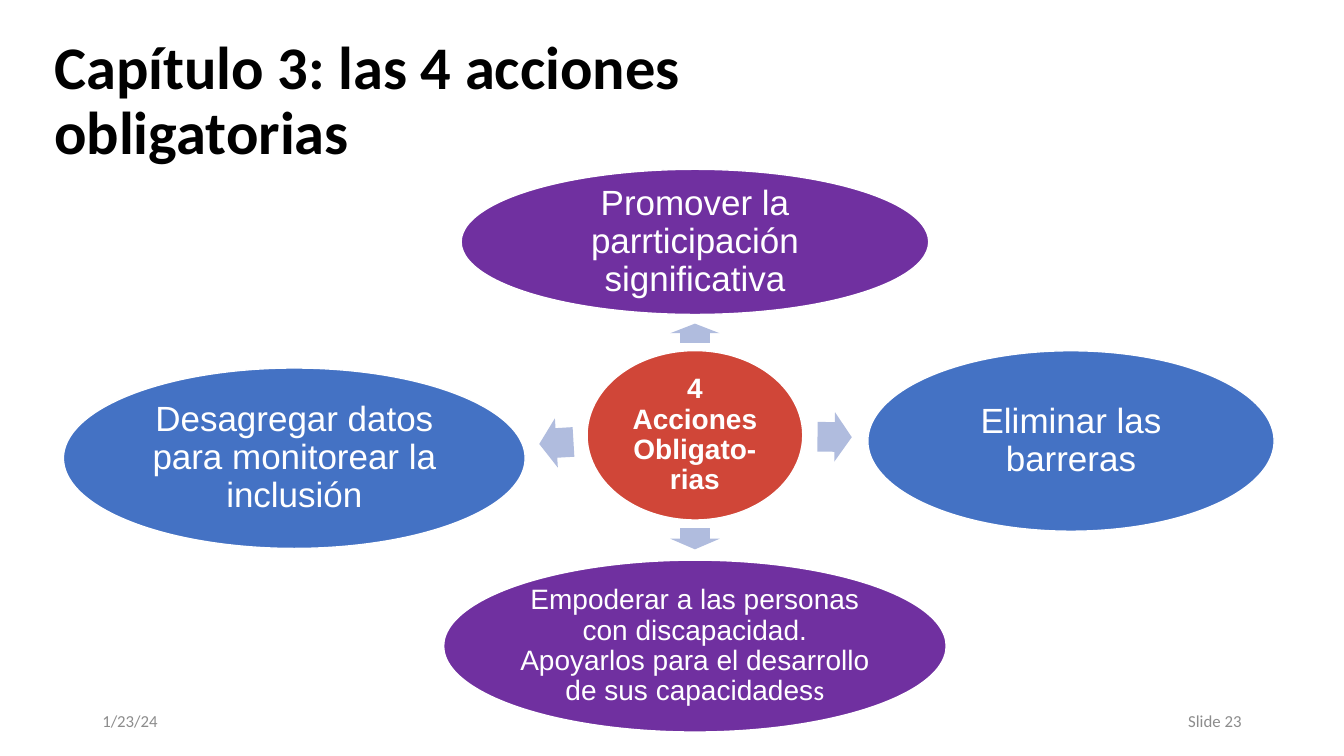
from dataclasses import dataclass

from pptx import Presentation
from pptx.dml.color import RGBColor
from pptx.enum.shapes import MSO_SHAPE as Preset
from pptx.enum.text import MSO_ANCHOR as Anchor, PP_ALIGN as Align
from pptx.shapes.autoshape import Shape
from pptx.slide import Slide
from pptx.text.text import _Paragraph as Paragraph
from pptx.util import Pt


@dataclass(frozen=True)
class Theme:
    red: str = "D04638"
    purple: str = "7030A0"
    blue: str = "4472C4"
    arrow: str = "B0BCDE"
    white: str = "FFFFFF"
    black: str = "000000"
    gray: str = "8C8C8C"
    heading_font: str = "Calibri"
    body_font: str = "Arial"
    title_size: float = 43.2
    large_size: float = 25
    small_size: float = 20
    footer_size: float = 12


THEME = Theme()
CENTER_X = 496.4
ARROW_WIDTH = 35.3


@dataclass(frozen=True)
class Bubble:
    text: str
    center_x: float
    center_y: float
    width: float
    height: float
    fill: str
    size: float = THEME.large_size
    bold: bool = False
    outline: float = 1
    inset: float = 2.2
    heading_font_suffix: str = ""


@dataclass(frozen=True)
class Arrow:
    center_x: float
    center_y: float
    length: float
    rotation: float


@dataclass(frozen=True)
class Label:
    text: str
    left: float
    top: float
    width: float
    height: float
    size: float = THEME.footer_size
    color: str = THEME.gray
    bold: bool = False
    align: Align = Align.LEFT
    line_spacing: float = 1


BUBBLES = [
    Bubble("4\vAcciones Obligato-rias", CENTER_X, 310.9, 154.1, 121,
           THEME.red, THEME.small_size, bold=True),
    Bubble("Promover la parrticipación significativa", CENTER_X, 172.8, 334, 103.7,
           THEME.purple),
    Bubble("Eliminar las barreras", 765, 315, 290.2, 128.9, THEME.blue),
    Bubble("Empoderar a las personas con discapacidad.\v"
           "Apoyarlos para el desarrollo de sus capacidades",
           CENTER_X, 461.5, 360, 123.8, THEME.purple, THEME.small_size,
           outline=2, inset=0.7, heading_font_suffix="s"),
    Bubble("Desagregar datos para monitorear la inclusión", 210.2, 327.3, 329.8, 128.9,
           THEME.blue),
]

ARROWS = [
    Arrow(CENTER_X, 238, 13.7, 270),
    Arrow(596.2, 312.1, 24.5, 0.8),
    Arrow(CENTER_X, 384.8, 15.1, 90),
    Arrow(397.4, 316.4, 24.5, 176.6),
]

LABELS = [
    Label("Capítulo 3: las 4 acciones obligatorias", 31.7, 20.9, 653, 104.4,
          THEME.title_size, THEME.black, bold=True, line_spacing=0.9),
    Label("1/23/24", 66, 500.4, 216, 28.8),
    Label("Slide 23", 678, 500.4, 216, 28.8, align=Align.RIGHT),
]


def style_paragraph(paragraph: Paragraph, font_name: str, size: float, color: str,
                    bold: bool, align: Align, line_spacing: float) -> None:
    paragraph.alignment = align
    paragraph.line_spacing = line_spacing
    font = paragraph.font
    font.name, font.size, font.bold = font_name, Pt(size), bold
    font.color.rgb = RGBColor.from_string(color)


def add_centered_shape(slide: Slide, preset: Preset, center_x: float, center_y: float,
                       width: float, height: float, fill: str) -> Shape:
    shape = slide.shapes.add_shape(preset, Pt(center_x - width / 2),
                                   Pt(center_y - height / 2), Pt(width), Pt(height))
    shape.shadow.inherit = False
    shape.fill.solid()
    shape.fill.fore_color.rgb = RGBColor.from_string(fill)
    return shape


def add_bubble(slide: Slide, bubble: Bubble) -> None:
    shape = add_centered_shape(slide, Preset.OVAL, bubble.center_x, bubble.center_y,
                               bubble.width, bubble.height, bubble.fill)
    shape.line.color.rgb = RGBColor.from_string(THEME.white)
    shape.line.width = Pt(bubble.outline)
    frame = shape.text_frame
    frame.word_wrap = True
    frame.vertical_anchor = Anchor.MIDDLE
    frame.margin_left = frame.margin_right = Pt(bubble.inset)
    frame.margin_top = frame.margin_bottom = Pt(bubble.inset)
    paragraph = frame.paragraphs[0]
    paragraph.text = bubble.text
    style_paragraph(paragraph, THEME.body_font, bubble.size, THEME.white,
                    bubble.bold, Align.CENTER, 0.9)
    if bubble.heading_font_suffix:
        run = paragraph.add_run()
        run.text = bubble.heading_font_suffix
        run.font.name = THEME.heading_font


def add_arrow(slide: Slide, arrow: Arrow) -> None:
    shape = add_centered_shape(slide, Preset.RIGHT_ARROW, arrow.center_x, arrow.center_y,
                               arrow.length, ARROW_WIDTH, THEME.arrow)
    shape.adjustments[0] = 0.6
    shape.adjustments[1] = 0.5
    shape.line.fill.background()
    shape.rotation = arrow.rotation


def add_label(slide: Slide, label: Label) -> None:
    box = slide.shapes.add_textbox(Pt(label.left), Pt(label.top),
                                   Pt(label.width), Pt(label.height))
    frame = box.text_frame
    frame.word_wrap = True
    frame.vertical_anchor = Anchor.MIDDLE
    paragraph = frame.paragraphs[0]
    paragraph.text = label.text
    style_paragraph(paragraph, THEME.heading_font, label.size, label.color,
                    label.bold, label.align, label.line_spacing)


def main() -> None:
    presentation = Presentation()
    presentation.slide_width, presentation.slide_height = Pt(960), Pt(540)
    slide = presentation.slides.add_slide(presentation.slide_layouts[6])
    for label in LABELS:
        add_label(slide, label)
    for bubble in BUBBLES:
        add_bubble(slide, bubble)
    for arrow in ARROWS:
        add_arrow(slide, arrow)
    presentation.save("out.pptx")


if __name__ == "__main__":
    main()
